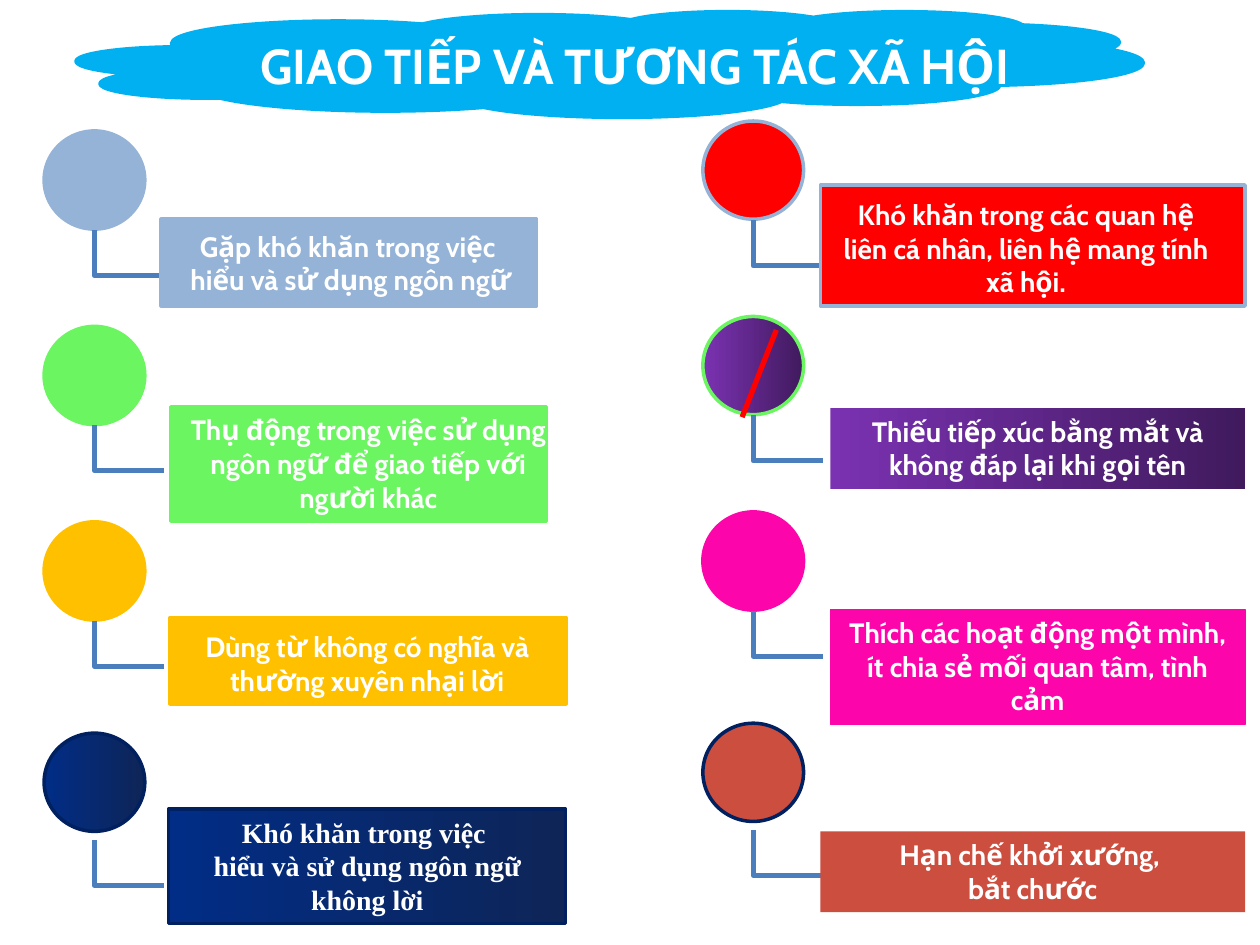
import dataclasses
from typing import Optional

import pptx
import pptx.dml.color
import pptx.enum.shapes
import pptx.enum.text
import pptx.oxml.ns
import pptx.util
from lxml import etree

Cm = pptx.util.Cm
Pt = pptx.util.Pt
Preset = pptx.enum.shapes.MSO_SHAPE
Connector = pptx.enum.shapes.MSO_CONNECTOR

CIRCLE_W, CIRCLE_H = 2.03, 1.98
ELBOW_RUN, ELBOW_DROP = 1.4, 0.92
NAVY = ("012D86", "0E2557")
PURPLE = ("7B32B2", "401A5D")


@dataclasses.dataclass
class Frame:
    left: float
    top: float
    width: float
    height: float

    def lengths(self) -> tuple:
        return Cm(self.left), Cm(self.top), Cm(self.width), Cm(self.height)


@dataclasses.dataclass
class Difficulty:
    lines: tuple
    fill: tuple  # one colour, or two for a gradient
    circle_line: str
    box: Frame
    box_line: Optional[str] = None
    line_width: float = 2
    caption: Optional[Frame] = None  # None: the wording sits in the box itself
    font: str = "Cabin"


@dataclasses.dataclass
class Column:
    left: float
    lift: float  # how far the column sits above the row positions
    difficulties: tuple


# Rows: top of the circle, top of the elbow below it
ROWS = ((2.64, 4.64), (6.58, 8.57), (10.52, 12.51), (14.78, 16.93))

LANGUAGE = Column(0.89, 0, (
    Difficulty(("Gặp khó khăn trong việc ", "hiểu và sử dụng ngôn ngữ"),
               ("95B3D7",), "95B3D7", Frame(3.25, 4.42, 7.57, 1.75), "95B3D7",
               caption=Frame(3.1, 4.5, 7.95, 1.63)),
    Difficulty(("Thụ động trong việc sử dụng ngôn ngữ để giao tiếp với người khác",),
               ("6BF661",), "6BF661", Frame(3.45, 8.2, 7.57, 2.31), "6BF661",
               caption=Frame(3.45, 8.2, 7.95, 2.31)),
    Difficulty(("Dùng từ không có nghĩa và thường xuyên nhại lời",),
               ("FFC000",), "FFC000", Frame(3.43, 12.45, 7.98, 1.75), "FFC000",
               caption=Frame(3.43, 12.57, 7.95, 1.63)),
    Difficulty(("Khó khăn trong việc ", "hiểu và sử dụng ngôn ngữ không lời"),
               NAVY, "002060", Frame(3.4, 16.31, 8, 2.31), "002060",
               caption=Frame(3.43, 16.31, 7.95, 2.31), font="Times New Roman"),
))

SOCIAL = Column(14.17, 0.2, (
    Difficulty(("Khó khăn trong các quan hệ liên cá nhân, liên hệ mang tính xã hội.",),
               ("FF0000",), "95B3D7", Frame(16.54, 3.73, 8.56, 2.44), "95B3D7",
               caption=Frame(16.71, 3.86, 7.95, 2.31)),
    Difficulty(("Thiếu tiếp xúc bằng mắt và không đáp lại khi gọi tên",),
               PURPLE, "6BF661", Frame(16.74, 8.23, 8.36, 1.63)),
    Difficulty(("Thích các hoạt động một mình, ít chia sẻ mối quan tâm, tình cảm",),
               ("FC05AA",), "FC05AA", Frame(16.74, 12.29, 8.36, 2.31), "FC05AA", 0.75),
    Difficulty(("Hạn chế khởi xướng, ", "bắt chước"),
               ("CC4E3F",), "002060", Frame(16.54, 16.76, 8.56, 1.63)),
))


def color(value: str) -> pptx.dml.color.RGBColor:
    return pptx.dml.color.RGBColor.from_string(value)


def add_preset(slide, preset, frame: Frame, fill: tuple,
               line: Optional[str], line_width: float = 2):
    shape = slide.shapes.add_shape(preset, *frame.lengths())
    shape.shadow.inherit = False
    if len(fill) == 1:
        shape.fill.solid()
        shape.fill.fore_color.rgb = color(fill[0])
    else:
        shape.fill.gradient()
        shape.fill.gradient_angle = 0
        for stop, value in zip(shape.fill.gradient_stops, fill):
            stop.color.rgb = color(value)
    if line:
        shape.line.color.rgb = color(line)
        shape.line.width = Pt(line_width)
    else:
        shape.line.fill.background()
    return shape


def write(text_frame, lines: tuple, font: str, size: float, wrap: bool = True) -> None:
    text_frame.word_wrap = wrap
    text_frame.auto_size = pptx.enum.text.MSO_AUTO_SIZE.SHAPE_TO_FIT_TEXT
    text_frame.vertical_anchor = pptx.enum.text.MSO_ANCHOR.TOP
    for index, line in enumerate(lines):
        paragraph = text_frame.add_paragraph() if index else text_frame.paragraphs[0]
        paragraph.alignment = pptx.enum.text.PP_ALIGN.CENTER
        run = paragraph.add_run()
        run.text = line
        run.font.name = font
        run.font.size = Pt(size)
        run.font.bold = True
        run.font.color.rgb = color("FFFFFF")


def add_line(slide, kind, start: tuple, end: tuple, line: str):
    connector = slide.shapes.add_connector(kind, *map(Cm, start + end))
    connector.line.color.rgb = color(line)
    connector.line.width = Pt(3)
    etree.SubElement(connector._element.spPr, pptx.oxml.ns.qn("a:effectLst"))
    return connector


def add_elbow(slide, left: float, top: float) -> None:
    """Draw a line that goes down from (left, top), then right."""
    # The unrotated box shares its centre with the turned one
    middle_x, middle_y = left + ELBOW_RUN / 2, top + ELBOW_DROP / 2
    half_w, half_h = ELBOW_DROP / 2, ELBOW_RUN / 2
    elbow = add_line(slide, Connector.ELBOW,
                     (middle_x - half_w, middle_y + half_h),
                     (middle_x + half_w, middle_y - half_h), "4B7EBC")
    properties = elbow._element.spPr
    properties.find(pptx.oxml.ns.qn("a:xfrm")).set("rot", "5400000")
    properties.find(pptx.oxml.ns.qn("a:prstGeom")).set("prst", "bentConnector2")


def add_column(slide, column: Column) -> None:
    for (circle_top, _), item in zip(ROWS, column.difficulties):
        circle = Frame(column.left, circle_top - column.lift, CIRCLE_W, CIRCLE_H)
        add_preset(slide, Preset.OVAL, circle, item.fill, item.circle_line)
    for _, elbow_top in ROWS:
        add_elbow(slide, column.left + CIRCLE_W / 2, elbow_top - column.lift)
    for item in column.difficulties:
        holder = add_preset(slide, Preset.RECTANGLE, item.box, item.fill,
                            item.box_line, item.line_width)
        if item.caption:
            holder = slide.shapes.add_textbox(*item.caption.lengths())
        write(holder.text_frame, item.lines, item.font, 16)


def main() -> None:
    presentation = pptx.Presentation()
    presentation.slide_width, presentation.slide_height = Cm(25.4), Cm(19.05)
    slide = presentation.slides.add_slide(presentation.slide_layouts[5])

    # Title on its cloud
    cloud = add_preset(slide, Preset.CLOUD, Frame(1.55, 0.23, 21.49, 2.13),
                       ("00B0F0",), "00B0F0")
    heading = slide.shapes.title
    heading.left, heading.top, heading.width, heading.height = Frame(
        4.01, 0.58, 17.58, 1.45).lengths()
    write(heading.text_frame, ("GIAO TIẾP VÀ TƯƠNG TÁC XÃ HỘI",), "Cabin", 28, wrap=False)
    cloud._element.addnext(heading._element)

    # Two columns of difficulties
    for column in (LANGUAGE, SOCIAL):
        add_column(slide, column)

    # Red stroke across the eye-contact circle
    add_line(slide, Connector.STRAIGHT, (15.65, 6.65), (14.96, 8.41), "FF0000")

    presentation.save("out.pptx")


if __name__ == "__main__":
    main()
